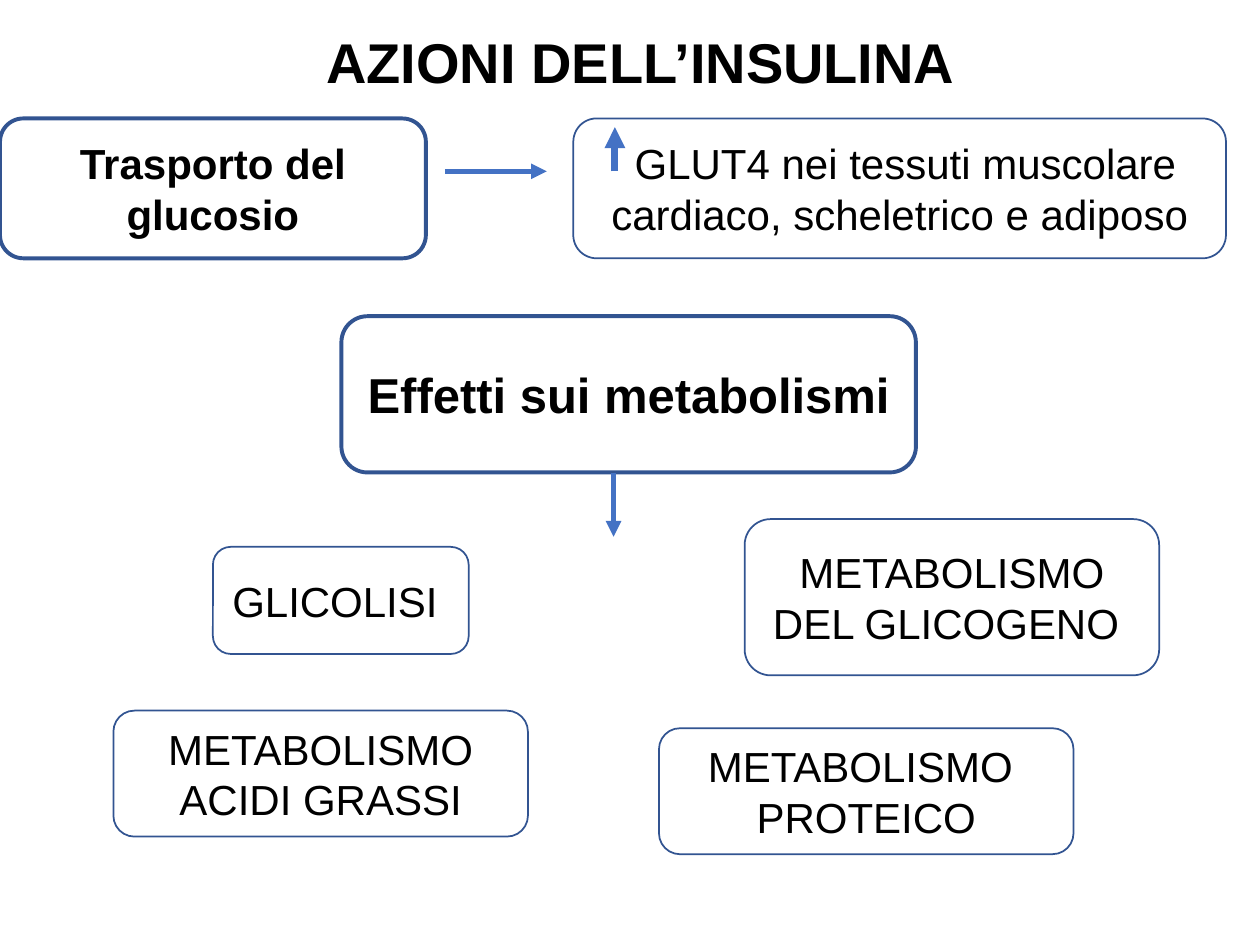
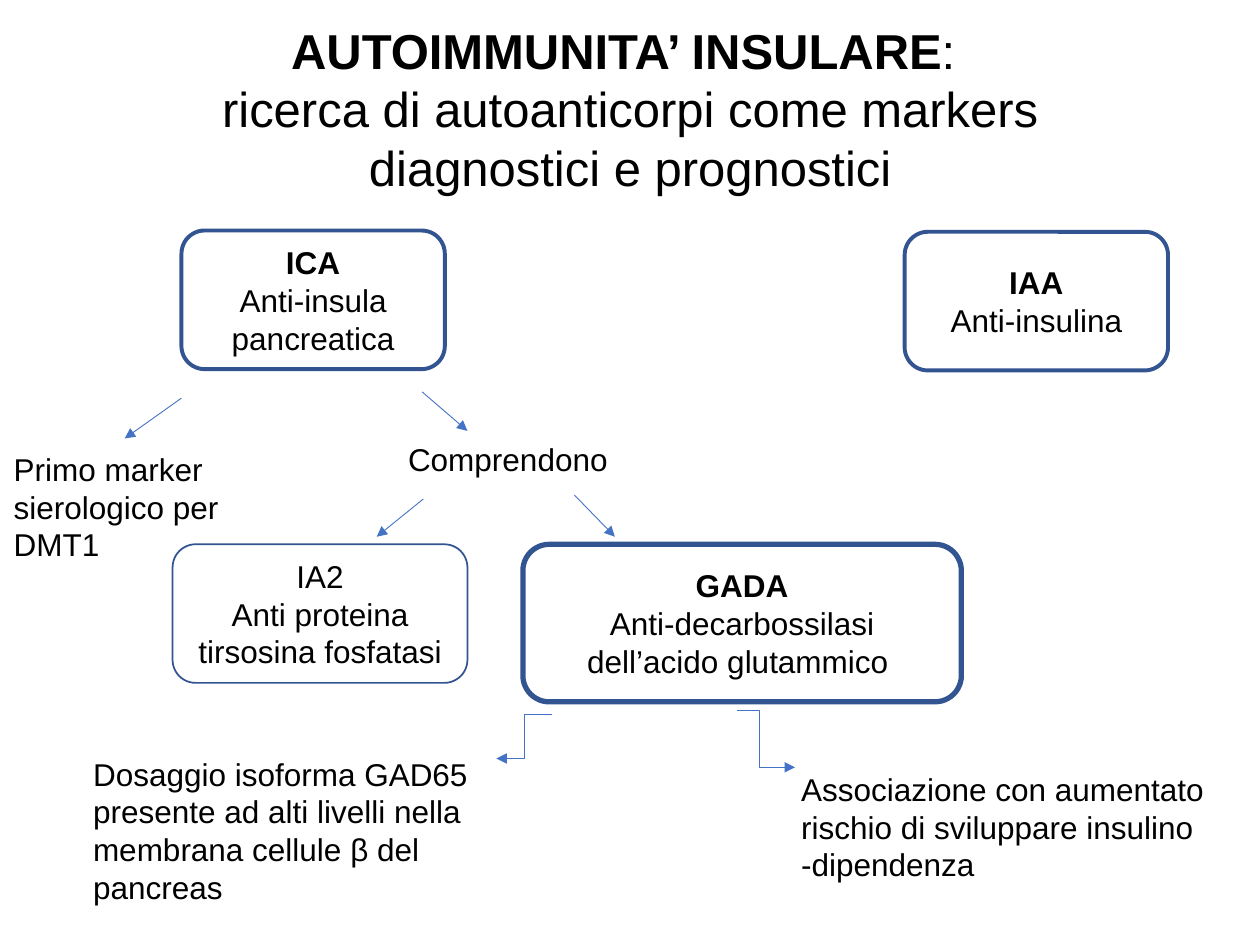
from lxml.etree import SubElement
from pptx import Presentation
from pptx.dml.color import RGBColor
from pptx.enum.shapes import MSO_CONNECTOR as Link, MSO_SHAPE as Shape
from pptx.enum.text import MSO_ANCHOR as Anchor, MSO_AUTO_SIZE as Fit, PP_ALIGN as Align
from pptx.oxml.ns import qn
from pptx.util import Inches, Pt

BLACK = RGBColor(0, 0, 0)
WHITE = RGBColor(255, 255, 255)
NAVY = RGBColor(0x32, 0x54, 0x91)
BLUE = RGBColor(0x44, 0x72, 0xC4)


def write(frame, lines, size, bolds=0, align=Align.CENTER):
    frame.word_wrap = True
    frame.text = "\n".join(lines)
    for i, para in enumerate(frame.paragraphs):
        para.alignment = align
        para.font.name = "Arial"
        para.font.size = Pt(size)
        para.font.bold = i < bolds
        para.font.color.rgb = BLACK


def link(slide, kind, ends, width):
    line = slide.shapes.add_connector(kind, *map(Inches, ends))
    line.line.color.rgb = BLUE
    line.line.width = Pt(width)
    SubElement(line.line._get_or_add_ln(), qn("a:tailEnd"), type="triangle")
    SubElement(line._element.spPr, qn("a:effectLst"))
    return line


deck = Presentation()
deck.slide_width, deck.slide_height = Inches(10), Inches(7.5)

heads = [
    ((1.76, 0.17, 6.76, 0.64), ["AZIONI DELL’INSULINA "], 32),
    ((1.14, 0.11, 7.72, 1.51),
     ["AUTOIMMUNITA’ INSULARE", "ricerca di autoanticorpi come markers diagnostici e prognostici"], 28),
]
boxes = [
    [
        ((0, 0.94, 3.38, 1.11), ["Trasporto del glucosio"], 24, 1, 2.25),
        ((4.55, 0.94, 5.18, 1.11), [" GLUT4 nei tessuti muscolare cardiaco, scheletrico e adiposo"], 24, 0, 1),
        ((2.71, 2.51, 4.56, 1.24), ["Effetti sui metabolismi"], 28, 1, 2.25),
        ((1.69, 4.34, 2.03, 0.85), ["GLICOLISI "], 24, 0, 1),
        ((5.91, 4.12, 3.29, 1.24), ["METABOLISMO DEL GLICOGENO "], 24, 0, 1),
        ((0.9, 5.64, 3.29, 1), ["METABOLISMO ACIDI GRASSI"], 24, 0, 1),
        ((5.23, 5.78, 3.29, 1), ["METABOLISMO  PROTEICO"], 24, 0, 1),
    ],
    [
        ((1.44, 1.83, 2.09, 1.1), ["ICA", "Anti-insula pancreatica"], 18, 1, 2.25),
        ((7.18, 1.84, 2.09, 1.1), ["IAA", "Anti-insulina"], 18, 1, 2.25),
        ((1.37, 4.32, 2.34, 1.1), ["IA2", "Anti proteina tirsosina fosfatasi"], 18, 0, 1),
        ((4.15, 4.32, 3.48, 1.25), ["GADA", "Anti-decarbossilasi dell’acido glutammico "], 18, 1, 3),
    ],
]
arrows = [
    [
        ((4.88, 1.36, 4.88, 1.01), 4),
        ((3.53, 1.36, 4.34, 1.36), 3),
        ((4.87, 3.75, 4.87, 4.26), 3),
    ],
    [
        ((1.44, 3.16, 0.99, 3.48), 0.5),
        ((3.35, 3.11, 3.71, 3.42), 0.5),
        ((3.36, 3.96, 2.99, 4.26), 0.5),
        ((4.56, 3.93, 4.88, 4.26), 0.5),
    ],
]
notes = [
    ((0.01, 3.52, 2.41, 1.01), "Primo marker sierologico per DMT1"),
    ((3.14, 3.44, 1.87, 0.4), "Comprendono"),
    ((0.64, 5.94, 3.65, 1.31),
     "Dosaggio isoforma GAD65 presente ad alti livelli nella membrana cellule β del pancreas"),
    ((6.26, 6.06, 3.65, 1.01), "Associazione con aumentato rischio di sviluppare insulino -dipendenza"),
]

for head, group, lines in zip(heads, boxes, arrows):
    slide = deck.slides.add_slide(deck.slide_layouts[5])
    place, words, size = head
    title = slide.shapes.title
    title.left, title.top, title.width, title.height = map(Inches, place)
    title.text_frame.auto_size = Fit.NONE
    title.text_frame.vertical_anchor = Anchor.TOP
    write(title.text_frame, words, size, 1)

    for place, words, size, bolds, width in group:
        box = slide.shapes.add_shape(Shape.ROUNDED_RECTANGLE, *map(Inches, place))
        box.shadow.inherit = False
        box.fill.solid()
        box.fill.fore_color.rgb = WHITE
        box.line.color.rgb = NAVY
        box.line.width = Pt(width)
        box.text_frame.vertical_anchor = Anchor.MIDDLE
        write(box.text_frame, words, size, bolds)

    for ends, width in lines:
        link(slide, Link.STRAIGHT, ends, width)

colon = title.text_frame.paragraphs[0].add_run()
colon.text = ": "
colon.font.bold = False

for place, words in notes:
    note = slide.shapes.add_textbox(*map(Inches, place))
    write(note.text_frame, [words], 18, align=Align.LEFT)

link(slide, Link.ELBOW, (4.38, 5.67, 3.94, 6.02), 0.5)
bend = link(slide, Link.ELBOW, (5.85, 5.64, 6.31, 6.09), 0.5)
guides = bend._element.spPr.find(qn("a:prstGeom")).get_or_add_avLst()
SubElement(guides, qn("a:gd"), name="adj1", fmla="val 38400")

deck.save("out.pptx")
